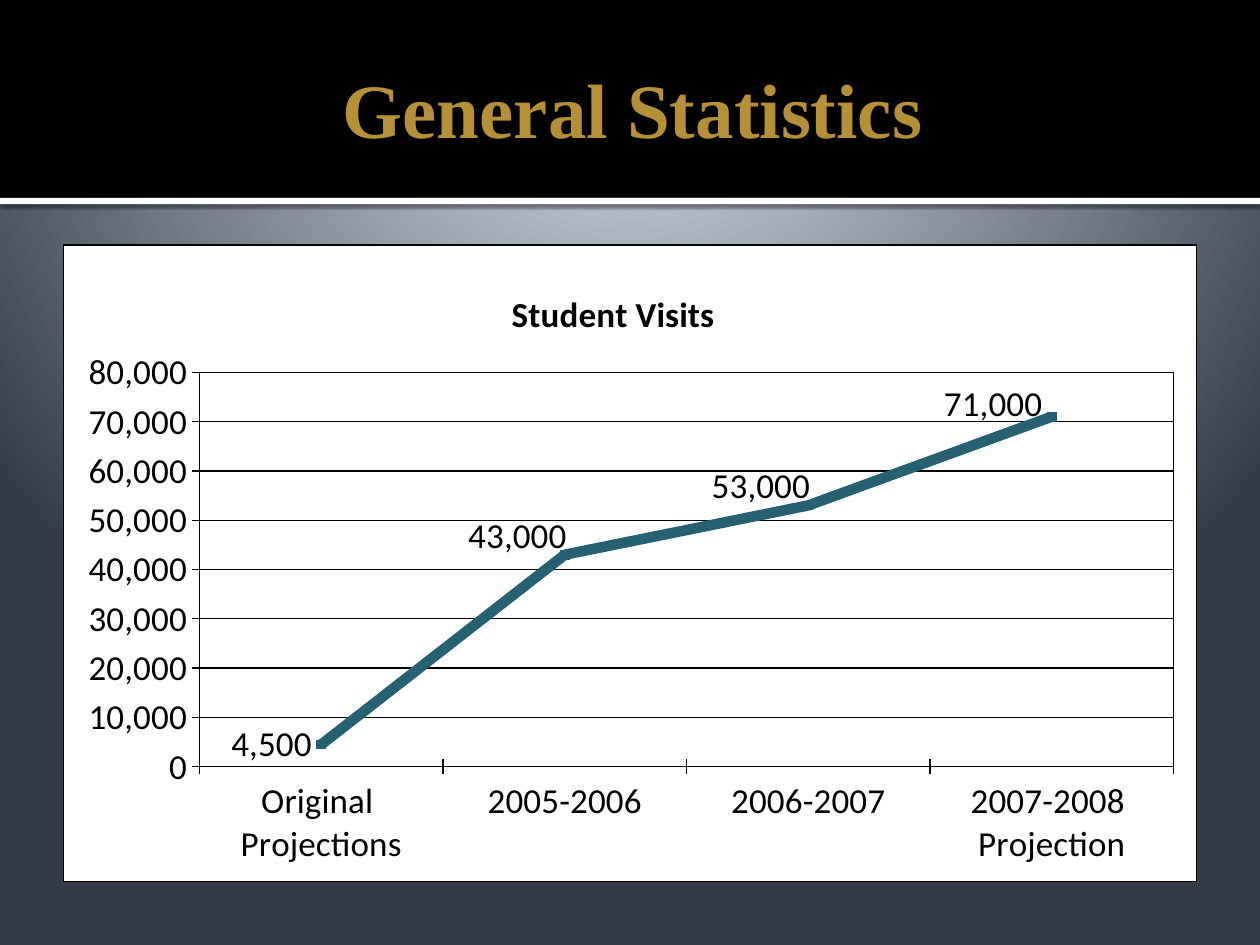
from pptx import Presentation
from pptx.chart.data import CategoryChartData
from pptx.dml.color import RGBColor
from pptx.enum.chart import (XL_CHART_TYPE, XL_LABEL_POSITION, XL_MARKER_STYLE,
                             XL_TICK_MARK)
from pptx.enum.shapes import MSO_SHAPE
from pptx.enum.text import MSO_ANCHOR, PP_ALIGN
from pptx.oxml import parse_xml
from pptx.oxml.ns import nsdecls, qn
from pptx.util import Inches, Pt

LINE = XL_CHART_TYPE.LINE_MARKERS_STACKED
LEFT = XL_LABEL_POSITION.LEFT
SQUARE = XL_MARKER_STYLE.SQUARE
CROSS = XL_TICK_MARK.CROSS
NONE = XL_TICK_MARK.NONE
RECT = MSO_SHAPE.RECTANGLE
MIDDLE = MSO_ANCHOR.MIDDLE
CENTER = PP_ALIGN.CENTER

BLACK = RGBColor(0x00, 0x00, 0x00)
WHITE = RGBColor(0xFF, 0xFF, 0xFF)
GOLD = RGBColor(0xB7, 0x8F, 0x37)
TEAL = RGBColor(0x24, 0x61, 0x72)
PALE = RGBColor(0xC1, 0xC5, 0xD3)
MIST = RGBColor(0xBF, 0xC4, 0xD2)
SLATE = RGBColor(0x35, 0x3B, 0x47)

STOPS = [(0, PALE), (12, PALE), (20, MIST), (100, SLATE)]
VISITS = [("Original \nProjections", 4500), ("2005-2006", 43000),
          ("2006-2007", 53000), ("2007-2008 \nProjection", 71000)]
SHIFTS = {1: (0.01, -0.03), 2: (0.01, -0.03), 3: (0, -0.02)}
COMMAS = "#,##0"
BODY = {"name": "Calibri", "size": Pt(20), "bold": False}
HEAD = {"name": "Calibri", "size": Pt(20), "bold": True}
TITLE = {"name": "Times New Roman", "size": Pt(44), "bold": True}


def style(item, form):
    for key, value in form.items():
        setattr(item, key, value)


def type_in(font, form, color):
    style(font, form)
    font.color.rgb = color


def box(area):
    return [Inches(n) for n in area]


def shade(slide):
    slide.background.fill.solid()
    stops = "".join(f'<a:gs pos="{pos * 1000}"><a:srgbClr val="{color}"/></a:gs>'
                    for pos, color in STOPS)
    grad = parse_xml(
        f'<a:gradFill {nsdecls("a")} rotWithShape="1"><a:gsLst>{stops}</a:gsLst>'
        '<a:path path="circle"><a:fillToRect l="10000" t="-25000" r="10000" '
        'b="125000"/></a:path></a:gradFill>')
    fill = slide.element.find(".//" + qn("p:bgPr"))[0]
    fill.getparent().replace(fill, grad)


def add_band(slide, area, color):
    band = slide.shapes.add_shape(RECT, *box(area))
    band.shadow.inherit = False
    band.fill.solid()
    band.fill.fore_color.rgb = color
    band.line.fill.background()
    return band


def cast(shape):
    glow = parse_xml(
        f'<a:outerShdw {nsdecls("a")} blurRad="{Pt(2.5)}" dist="{Pt(0.8)}" '
        'dir="5400000" rotWithShape="0"><a:srgbClr val="000000">'
        '<a:alpha val="60000"/></a:srgbClr></a:outerShdw>')
    shape.element.spPr.find(qn("a:effectLst")).append(glow)


def add_title(slide, text, area):
    frame = slide.shapes.add_textbox(*box(area)).text_frame
    style(frame, {"word_wrap": True, "vertical_anchor": MIDDLE,
                  "margin_left": Inches(0.1), "margin_right": Inches(0.05),
                  "margin_top": Inches(0.05), "margin_bottom": Inches(0.05)})
    line = frame.paragraphs[0]
    style(line, {"text": text, "alignment": CENTER})
    type_in(line.runs[0].font, TITLE, GOLD)


def place(node, index, **spots):
    old = node.find(qn("c:layout"))
    if old is not None:
        node.remove(old)
    parts = "".join(f'<c:{key} val="{value}"/>' for key, value in spots.items())
    node.insert(index, parse_xml(
        f'<c:layout {nsdecls("c")}><c:manualLayout>{parts}'
        '</c:manualLayout></c:layout>'))


def border(fill):
    return parse_xml(
        f'<c:spPr {nsdecls("c", "a")}>{fill}<a:ln w="{Pt(0.75)}"><a:solidFill>'
        f'<a:srgbClr val="{BLACK}"/></a:solidFill></a:ln></c:spPr>')


def rule(line, color, width):
    line.color.rgb = color
    line.width = Pt(width)


def set_axis(axis):
    style(axis, {"major_tick_mark": CROSS, "minor_tick_mark": NONE})
    rule(axis.format.line, BLACK, 0.75)
    type_in(axis.tick_labels.font, BODY, BLACK)


def set_line(series):
    series.smooth = False
    rule(series.format.line, TEAL, 6)
    style(series.marker, {"style": SQUARE, "size": 5})
    series.marker.format.fill.solid()
    series.marker.format.fill.fore_color.rgb = TEAL
    rule(series.marker.format.line, TEAL, 0.75)
    labels = series.data_labels
    style(labels, {"show_value": True, "position": LEFT,
                   "number_format": COMMAS, "number_format_is_linked": False})
    type_in(labels.font, BODY, BLACK)
    for index, (x, y) in SHIFTS.items():
        label = series.points[index].data_label
        type_in(label.font, BODY, BLACK)
        label.position = LEFT
    tags = series.data_labels._element.findall(qn("c:dLbl"))
    for tag, (x, y) in zip(tags, SHIFTS.values()):
        place(tag, 1, x=x, y=y)


def add_graph(slide, name, area):
    data = CategoryChartData(number_format=COMMAS)
    data.categories = [label for label, _ in VISITS]
    data.add_series(name, [count for _, count in VISITS])
    chart = slide.shapes.add_chart(LINE, *box(area), data).chart
    type_in(chart.font, BODY, BLACK)
    style(chart, {"has_legend": False, "has_title": True})
    frame = chart.chart_title.text_frame
    frame.text = name
    type_in(frame.paragraphs[0].runs[0].font, HEAD, BLACK)
    place(chart.chart_title._element, 1, xMode="edge", yMode="edge",
          x=0.39, y=0.06)

    for axis in (chart.category_axis, chart.value_axis):
        set_axis(axis)
    style(chart.value_axis, {"minimum_scale": 0, "maximum_scale": 80000,
                             "major_unit": 10000, "has_major_gridlines": True})
    style(chart.value_axis.tick_labels, {"number_format": COMMAS,
                                         "number_format_is_linked": False})
    rule(chart.value_axis.major_gridlines.format.line, BLACK, 0.75)
    chart.plots[0].vary_by_categories = False
    set_line(chart.plots[0].series[0])

    root = chart.element
    plot = root.find(".//" + qn("c:plotArea"))
    place(plot, 0, layoutTarget="inner", xMode="edge", yMode="edge",
          x=0.12, y=0.2, w=0.86, h=0.62)
    plot.append(border("<a:noFill/>"))
    root.find(qn("c:txPr")).addprevious(border(
        f'<a:solidFill><a:srgbClr val="{WHITE}"/></a:solidFill>'))


def main():
    deck = Presentation()
    style(deck, {"slide_width": Inches(10), "slide_height": Inches(7.5)})
    slide = deck.slides.add_slide(deck.slide_layouts[6])
    shade(slide)
    cast(add_band(slide, (0, 1.57, 10, 0.05), WHITE))
    add_band(slide, (0, 0, 10, 1.57), BLACK)
    add_title(slide, "General Statistics", (0.5, 0.17, 9, 1.37))
    add_graph(slide, "Student Visits", (0.5, 1.94, 9, 5.06))
    deck.save("out.pptx")


if __name__ == "__main__":
    main()
